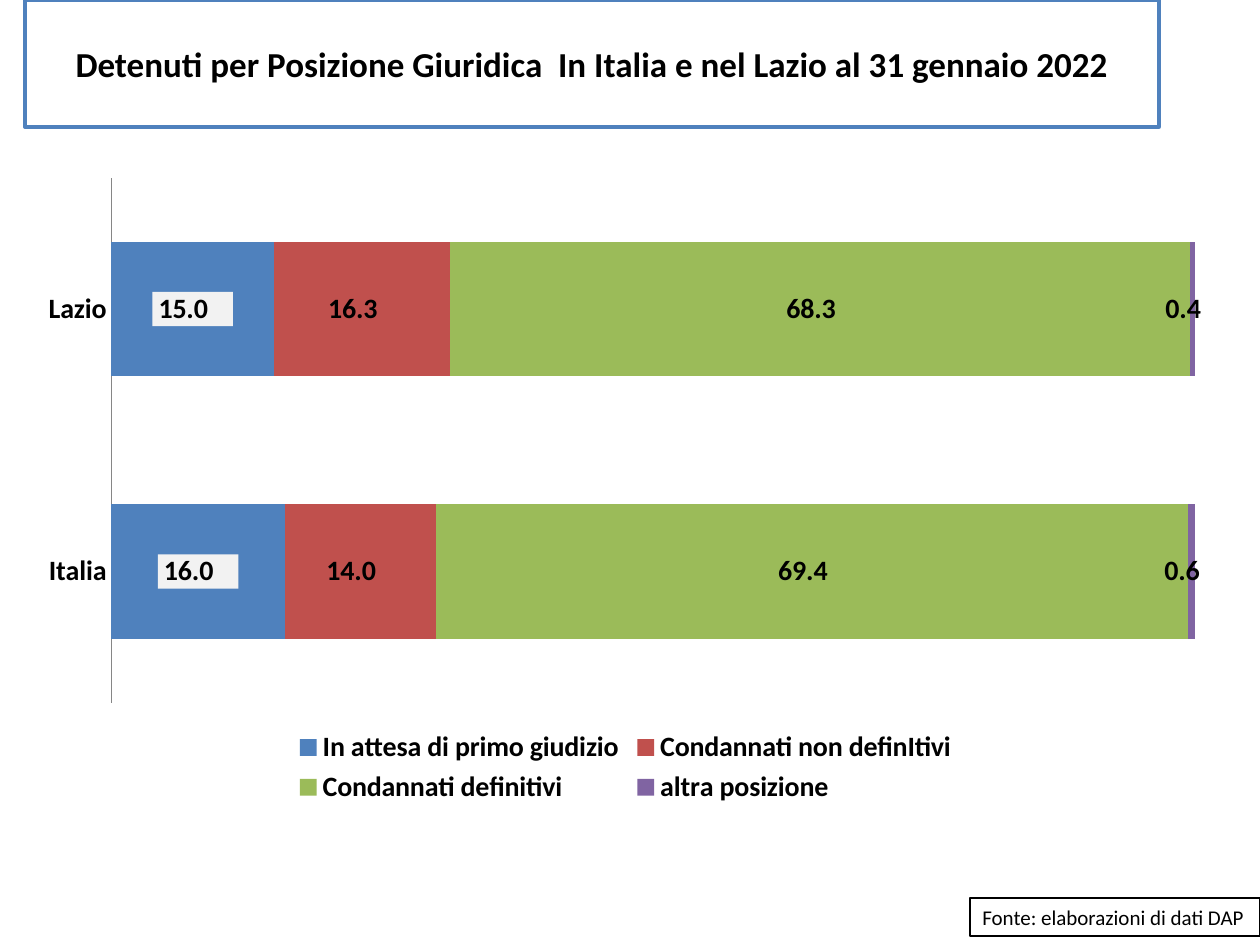
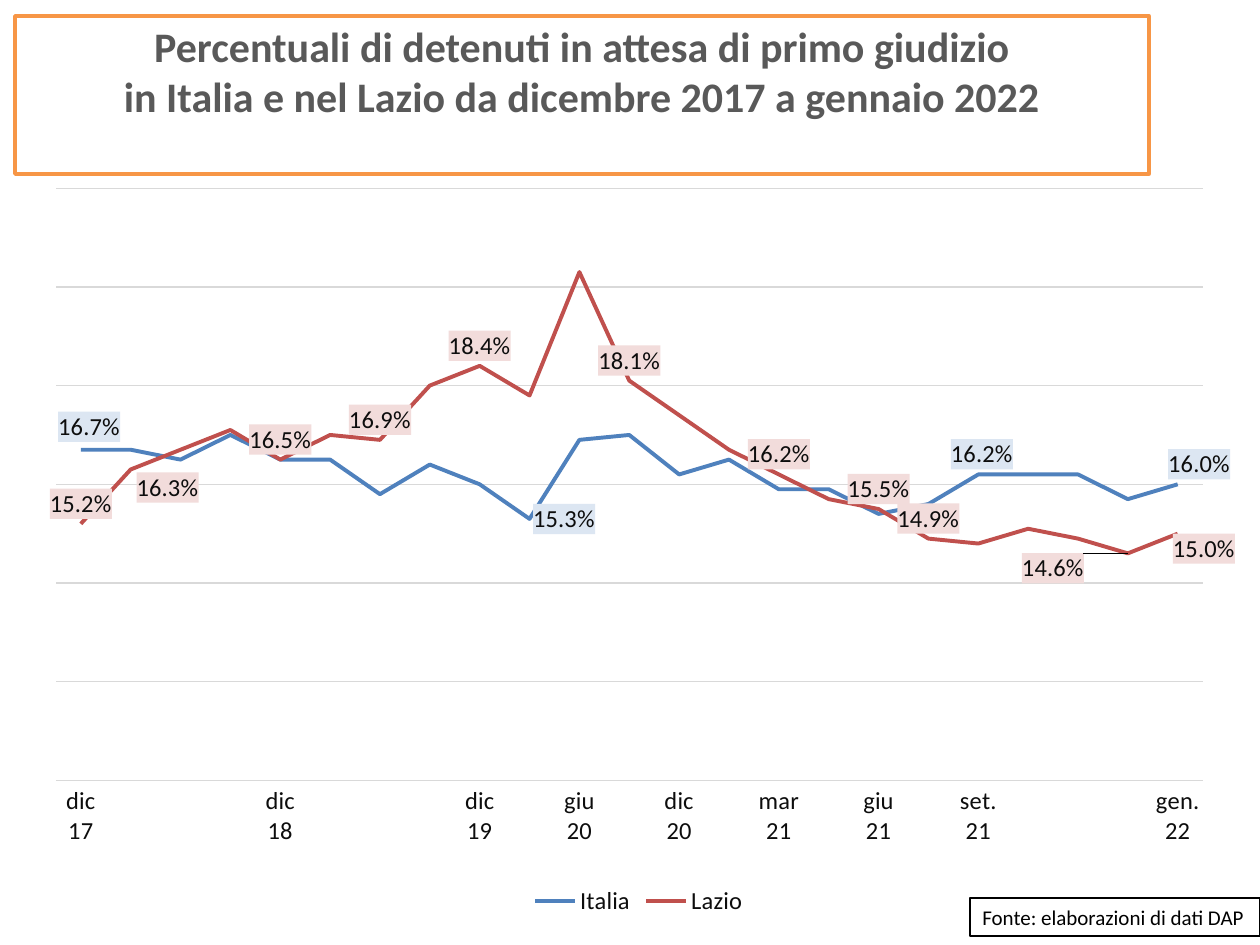
import pptx
import pptx.chart.data
import pptx.dml.color
import pptx.enum.chart
import pptx.enum.text
import pptx.oxml
import pptx.oxml.ns
import pptx.util

RGBColor = pptx.dml.color.RGBColor
ChartType = pptx.enum.chart.XL_CHART_TYPE
LabelPosition = pptx.enum.chart.XL_LABEL_POSITION
Anchor = pptx.enum.text.MSO_ANCHOR

PX_PER_INCH = 126
FONT = "Calibri"
BLACK = RGBColor(0x00, 0x00, 0x00)
WHITE = RGBColor(0xFF, 0xFF, 0xFF)
INK = RGBColor(0x0D, 0x0D, 0x0D)
TITLE_GREY = RGBColor(0x59, 0x59, 0x59)
AXIS_GREY = RGBColor(0x86, 0x86, 0x86)
GRID_GREY = RGBColor(0xD9, 0xD9, 0xD9)
LABEL_GREY = RGBColor(0xF2, 0xF2, 0xF2)
BLUE = RGBColor(0x4F, 0x81, 0xBD)
RED = RGBColor(0xC0, 0x50, 0x4D)
GREEN = RGBColor(0x9B, 0xBB, 0x59)
PURPLE = RGBColor(0x80, 0x64, 0xA2)
ORANGE = RGBColor(0xF7, 0x96, 0x46)
PALE_BLUE = RGBColor(0xDC, 0xE6, 0xF2)
PALE_RED = RGBColor(0xF2, 0xDC, 0xDB)

ACCOUNTING = "_-* #,##0.0\\ _€_-;\\-* #,##0.0\\ _€_-"
PERCENT = "0.0%"
SOURCE_BOX = (970, 898, 290, 38)

POSITIONS = [
    ("In attesa di primo giudizio", BLUE, (15.0, 16.0)),
    ("Condannati non definItivi", RED, (16.3, 14.0)),
    ("Condannati definitivi", GREEN, (68.3, 69.4)),
    ("altra posizione", PURPLE, (0.4, 0.6)),
]

# Newest month first: the category axis runs in reverse order.
MONTH_COUNT = 23
NAMED_MONTHS = {0: "gen. 22", 4: "set. 21", 6: "giu 21", 8: "mar 21", 10: "dic 20",
                12: "giu 20", 14: "dic 19", 18: "dic 18", 22: "dic 17"}
ITALIA = (0.160, 0.157, 0.162, 0.162, 0.162, 0.156, 0.154, 0.159, 0.159, 0.165, 0.162, 0.170,
          0.169, 0.153, 0.160, 0.164, 0.158, 0.165, 0.165, 0.170, 0.165, 0.167, 0.167)
LAZIO = (0.150, 0.146, 0.149, 0.151, 0.148, 0.149, 0.155, 0.157, 0.162, 0.167, 0.174, 0.181,
         0.203, 0.178, 0.184, 0.180, 0.169, 0.170, 0.165, 0.171, 0.167, 0.163, 0.152)
# Labelled month: shift of its label in px from the place above the point.
ITALIA_LABELS = {0: (21, 0), 4: (3, 0), 13: (35, 20), 22: (8, -3)}
LAZIO_LABELS = {0: (26, 35), 1: (-75, 35), 21: (37, 38),
                **dict.fromkeys((5, 6, 8, 11, 14, 16, 18, 22), (0, 0))}


def px(length):
    return pptx.util.Emu(round(length * 914400 / PX_PER_INCH))


def set_font(font, size, color, bold=False):
    font.name = FONT
    font.size = pptx.util.Pt(size)
    font.bold = bold
    font.color.rgb = color


def frame(shape, line_color, line_width):
    shape.fill.solid()
    shape.fill.fore_color.rgb = WHITE
    shape.line.color.rgb = line_color
    shape.line.width = pptx.util.Pt(line_width)


def chart_xml(tag, body="", attributes=""):
    namespaces = pptx.oxml.ns.nsdecls("c", "a")
    return pptx.oxml.parse_xml(f"<c:{tag} {namespaces} {attributes}>{body}</c:{tag}>")


def fill_xml(color):
    return chart_xml("spPr", f'<a:solidFill><a:srgbClr val="{color}"/></a:solidFill>')


def layout_xml(values, settings=""):
    sizes = "".join(f'<c:{key} val="{value:.3f}"/>' for key, value in values.items())
    return chart_xml("layout", f"<c:manualLayout>{settings}{sizes}</c:manualLayout>")


def add_title(slide, box, text, size, color, border, anchor):
    title = slide.shapes.title
    title.left, title.top, title.width, title.height = map(px, box)
    frame(title, border, 2)
    text_frame = title.text_frame
    text_frame.text = text
    text_frame.word_wrap = True
    text_frame.auto_size = pptx.enum.text.MSO_AUTO_SIZE.NONE
    text_frame.vertical_anchor = anchor
    text_frame.margin_top = text_frame.margin_bottom = px(4)
    paragraph = text_frame.paragraphs[0]
    paragraph.alignment = pptx.enum.text.PP_ALIGN.CENTER
    set_font(paragraph.font, size, color, bold=True)


def add_source(slide, box):
    source = slide.shapes.add_textbox(*map(px, box))
    frame(source, BLACK, 0.75)
    source.text_frame.word_wrap = False
    source.text_frame.text = "Fonte: elaborazioni di dati DAP"
    set_font(source.text_frame.paragraphs[0].font, 12, BLACK)


def add_chart(slide, box, plot_box, kind, categories, series, font):
    """Add a chart with a hidden value axis; plot_box is relative to box."""
    data = pptx.chart.data.CategoryChartData()
    data.categories = categories
    for name, _, values in series:
        data.add_series(name, values)
    chart = slide.shapes.add_chart(kind, *map(px, box), data).chart
    set_font(chart.font, *font)
    chart.has_title = False
    chart.has_legend = True
    chart.legend.position = pptx.enum.chart.XL_LEGEND_POSITION.BOTTOM
    chart.legend.include_in_layout = False

    chart.value_axis.visible = False
    chart.value_axis.has_major_gridlines = False
    chart.category_axis.reverse_order = True
    chart.category_axis.major_tick_mark = pptx.enum.chart.XL_TICK_MARK.NONE

    left, top, width, height = plot_box
    plot_area = chart._chartSpace.chart.plotArea
    for old_layout in plot_area.findall(pptx.oxml.ns.qn("c:layout")):
        plot_area.remove(old_layout)
    plot_area.insert(0, layout_xml(
        {"x": left / box[2], "y": top / box[3], "w": width / box[2], "h": height / box[3]},
        '<c:layoutTarget val="inner"/><c:xMode val="edge"/><c:yMode val="edge"/>'))
    return chart


def add_position_chart(slide, box):
    chart = add_chart(slide, box, (86, 13, 1083, 525), ChartType.BAR_STACKED_100,
                      ("Lazio", "Italia"), POSITIONS, (16, BLACK, True))
    chart.category_axis.format.line.color.rgb = AXIS_GREY
    plot = chart.plots[0]
    plot.gap_width = 95
    plot.overlap = 100
    plot.vary_by_categories = False
    for series, (_, color, _) in zip(plot.series, POSITIONS):
        series.format.fill.solid()
        series.format.fill.fore_color.rgb = color
        labels = series.data_labels
        labels.show_value = True
        labels.number_format = ACCOUNTING
        labels.number_format_is_linked = False
    first_labels = plot.series[0].data_labels._element
    first_labels.find(pptx.oxml.ns.qn("c:numFmt")).addnext(fill_xml(LABEL_GREY))


def label_months(series, shifts, fill, chart_box):
    series.data_labels.show_value = False
    for month, (dx, dy) in shifts.items():
        label = series.points[month].data_label
        set_font(label.font, 14, INK)
        label.position = LabelPosition.ABOVE
        index = series._element.xpath(f'c:dLbls/c:dLbl/c:idx[@val="{month}"]')[0]
        for old in index.getparent().xpath("c:spPr"):
            index.getparent().remove(old)
        index.addnext(fill_xml(fill))
        index.addnext(chart_xml("numFmt", attributes=f'formatCode="{PERCENT}" sourceLinked="0"'))
        index.addnext(layout_xml({"x": dx / chart_box[2], "y": dy / chart_box[3]}))


def add_trend_chart(slide, box):
    trends = [("Italia", BLUE, ITALIA), ("Lazio", RED, LAZIO)]
    months = [NAMED_MONTHS.get(month, "") for month in range(MONTH_COUNT)]
    chart = add_chart(slide, box, (12, 14, 1148, 592), ChartType.LINE, months, trends, (14, INK))
    value_axis = chart.value_axis
    value_axis.minimum_scale, value_axis.maximum_scale = 0.1, 0.22
    value_axis.major_unit = 0.02
    value_axis.has_major_gridlines = True
    for line in (value_axis.major_gridlines.format.line, chart.category_axis.format.line):
        line.color.rgb = GRID_GREY
        line.width = pptx.util.Pt(0.75)
    no_multi_level = chart.category_axis._element.find(pptx.oxml.ns.qn("c:noMultiLvlLbl"))
    no_multi_level.addprevious(chart_xml("tickLblSkip", attributes='val="1"'))

    plot = chart.plots[0]
    plot.vary_by_categories = False
    label_styles = [(ITALIA_LABELS, PALE_BLUE), (LAZIO_LABELS, PALE_RED)]
    for series, (_, color, _), (shifts, fill) in zip(plot.series, trends, label_styles):
        series.smooth = False
        series.marker.style = pptx.enum.chart.XL_MARKER_STYLE.NONE
        series.format.line.color.rgb = color
        series.format.line.width = pptx.util.Pt(2.25)
        label_months(series, shifts, fill, box)


def main():
    deck = pptx.Presentation()
    deck.slide_width, deck.slide_height = px(1260), px(945)
    title_only = deck.slide_layouts[5]

    slide = deck.slides.add_slide(title_only)
    add_title(slide, (25, 0, 1134, 127),
              "Detenuti per Posizione Giuridica  In Italia e nel Lazio al 31 gennaio 2022",
              20, BLACK, BLUE, Anchor.MIDDLE)
    add_position_chart(slide, (25, 165, 1201, 645))
    add_source(slide, SOURCE_BOX)

    slide = deck.slides.add_slide(title_only)
    add_title(slide, (15, 16, 1134, 158),
              "Percentuali di detenuti in attesa di primo giudizio\v"
              "in Italia e nel Lazio da dicembre 2017 a gennaio 2022",
              24, TITLE_GREY, ORANGE, Anchor.TOP)
    add_trend_chart(slide, (44, 174, 1191, 747))
    add_source(slide, SOURCE_BOX)

    deck.save("out.pptx")


if __name__ == "__main__":
    main()
